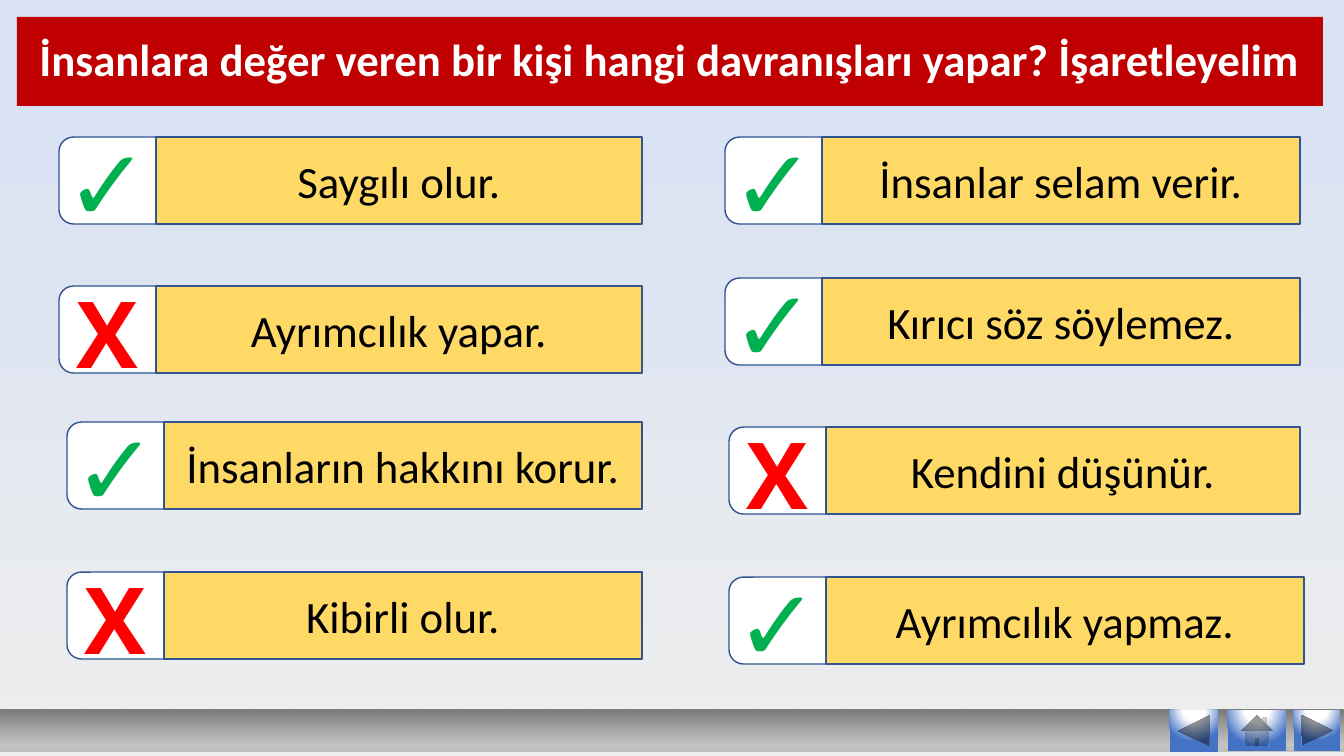
"""Build a Turkish classroom slide on behaviours that show respect for people."""
from lxml import etree
from pptx import Presentation
from pptx.dml.color import RGBColor
from pptx.enum.shapes import MSO_SHAPE
from pptx.enum.text import MSO_ANCHOR, PP_ALIGN
from pptx.oxml.ns import qn
from pptx.util import Emu, Pt

TITLE = "İnsanlara değer veren bir kişi hangi davranışları yapar? İşaretleyelim"
CHECK, CROSS = "✓", "X"
ANSWERS = [
    (59, 137, 642, CHECK, "Saygılı olur."),
    (59, 286, 642, CROSS, "Ayrımcılık yapar."),
    (67, 422, 642, CHECK, "İnsanların hakkını korur."),
    (67, 572, 642, CROSS, "Kibirli olur."),
    (725, 137, 1300, CHECK, "İnsanlar selam verir."),
    (725, 278, 1300, CHECK, "Kırıcı söz söylemez."),
    (729, 427, 1300, CROSS, "Kendini düşünür."),
    (729, 577, 1304, CHECK, "Ayrımcılık yapmaz."),
]
RECT = MSO_SHAPE.RECTANGLE
ROUND_TOP = MSO_SHAPE.ROUND_2_SAME_RECTANGLE
BUTTONS = [
    (MSO_SHAPE.ACTION_BUTTON_BACK_OR_PREVIOUS, 1170, 48, 42),
    (MSO_SHAPE.ACTION_BUTTON_FORWARD_OR_NEXT, 1294, 46, 41),
    (MSO_SHAPE.ACTION_BUTTON_HOME, 1228, 58, 41),
]
CENTER, MIDDLE = PP_ALIGN.CENTER, MSO_ANCHOR.MIDDLE

WHITE = RGBColor(0xFF, 0xFF, 0xFF)
BLACK = RGBColor(0, 0, 0)
TITLE_RED = RGBColor(0xC0, 0, 0)
YELLOW = RGBColor(0xFF, 0xD9, 0x66)
BOX_LINE = RGBColor(0x2F, 0x52, 0x8F)
LABEL_LINE = RGBColor(0x32, 0x54, 0x91)
GREEN = RGBColor(0, 0xB0, 0x50)
RED = RGBColor(0xFF, 0, 0)
BLUE = RGBColor(0x44, 0x72, 0xC4)
PAGE_GREY = RGBColor(0xED, 0xED, 0xED)
PAGE_BLUE = RGBColor(0xDA, 0xE3, 0xF3)
BAR_LIGHT = RGBColor(0xC0, 0xC0, 0xC0)
BAR_MID = RGBColor(0xB3, 0xB3, 0xB3)
BAR_DARK = RGBColor(0x77, 0x77, 0x77)

MARKS = {
    CHECK: (-23, -21, 144, 132, 72, "TeX Gyre Bonum", GREEN),
    CROSS: (7, -15, 83, 122, 66, "Open Sans", RED),
}
BOX_W, ROW_H = 97, 87
BAR_TOP = 710
PX = 914400 / 100.8


def px(*values):
    return [Emu(round(v * PX)) for v in values]


def add_shape(s, kind, x, y, w, h, color=None, line=None):
    sp = s.shapes.add_shape(kind, *px(x, y, w, h))
    sp.shadow.inherit = False
    if color is not None:
        sp.fill.solid()
        sp.fill.fore_color.rgb = color
    if line is None:
        sp.line.fill.background()
    else:
        sp.line.color.rgb = line
        sp.line.width = Pt(1)
    return sp


def set_text(sp, text, size, font, color, bold=False):
    tf = sp.text_frame
    tf.text = text
    p = tf.paragraphs[0]
    p.alignment = CENTER
    f = p.runs[0].font
    f.size, f.name, f.bold = Pt(size), font, bold
    f.color.rgb = color
    return tf


def set_gradient(owner, fill, stops, radial=False):
    fill.gradient()
    grad = owner._element.find(".//" + qn("a:gradFill"))
    for child in list(grad):
        grad.remove(child)
    gs_list = etree.SubElement(grad, qn("a:gsLst"))
    for pos, color, alpha in stops:
        gs = etree.SubElement(gs_list, qn("a:gs"), pos=str(pos * 1000))
        clr = etree.SubElement(gs, qn("a:srgbClr"), val=str(color))
        if alpha < 100:
            etree.SubElement(clr, qn("a:alpha"), val=str(alpha * 1000))
    if radial:
        route = etree.SubElement(grad, qn("a:path"), path="circle")
        etree.SubElement(route, qn("a:fillToRect"),
                         l="50000", t="-80000", r="50000", b="180000")
    else:
        etree.SubElement(grad, qn("a:lin"), ang="16200000", scaled="0")


def add_answer(s, x, y, right, mark, text):
    inset = (BOX_W - ROW_H) / 2
    box = add_shape(s, ROUND_TOP, x + inset, y - inset, ROW_H, BOX_W, WHITE, BOX_LINE)
    box.rotation = 270
    label = add_shape(s, RECT, x + BOX_W, y, right - x - BOX_W, ROW_H, YELLOW, LABEL_LINE)
    set_text(label, text, 32, "Calibri", BLACK).vertical_anchor = MIDDLE
    dx, dy, w, h, size, font, color = MARKS[mark]
    tb = s.shapes.add_textbox(*px(x + dx, y + dy, w, h))
    set_text(tb, mark, size, font, color, True).word_wrap = mark == CHECK


def main():
    prs = Presentation()
    prs.slide_width, prs.slide_height = px(1344, 756)
    s = prs.slides.add_slide(prs.slide_layouts[6])
    set_gradient(s, s.background.fill, [(0, PAGE_GREY, 100), (84, PAGE_BLUE, 100)])

    title = add_shape(s, RECT, 17, 17, 1306, 89, TITLE_RED)
    tf = set_text(title, TITLE, 32, "Calibri", WHITE, True)
    tf.vertical_anchor = MIDDLE
    tf.paragraphs[0].line_spacing = 0.9

    for answer in ANSWERS:
        add_answer(s, *answer)

    bar = add_shape(s, RECT, 0, BAR_TOP, 1344, 42)
    set_gradient(bar, bar.fill,
                 [(0, BAR_LIGHT, 100), (17, BAR_MID, 70), (100, BAR_DARK, 100)])
    for kind, x, w, h in BUTTONS:
        button = add_shape(s, kind, x, BAR_TOP, w, h)
        set_gradient(button, button.fill,
                     [(0, WHITE, 100), (35, WHITE, 100), (100, BLUE, 100)], radial=True)
    prs.save("out.pptx")


if __name__ == "__main__":
    main()
